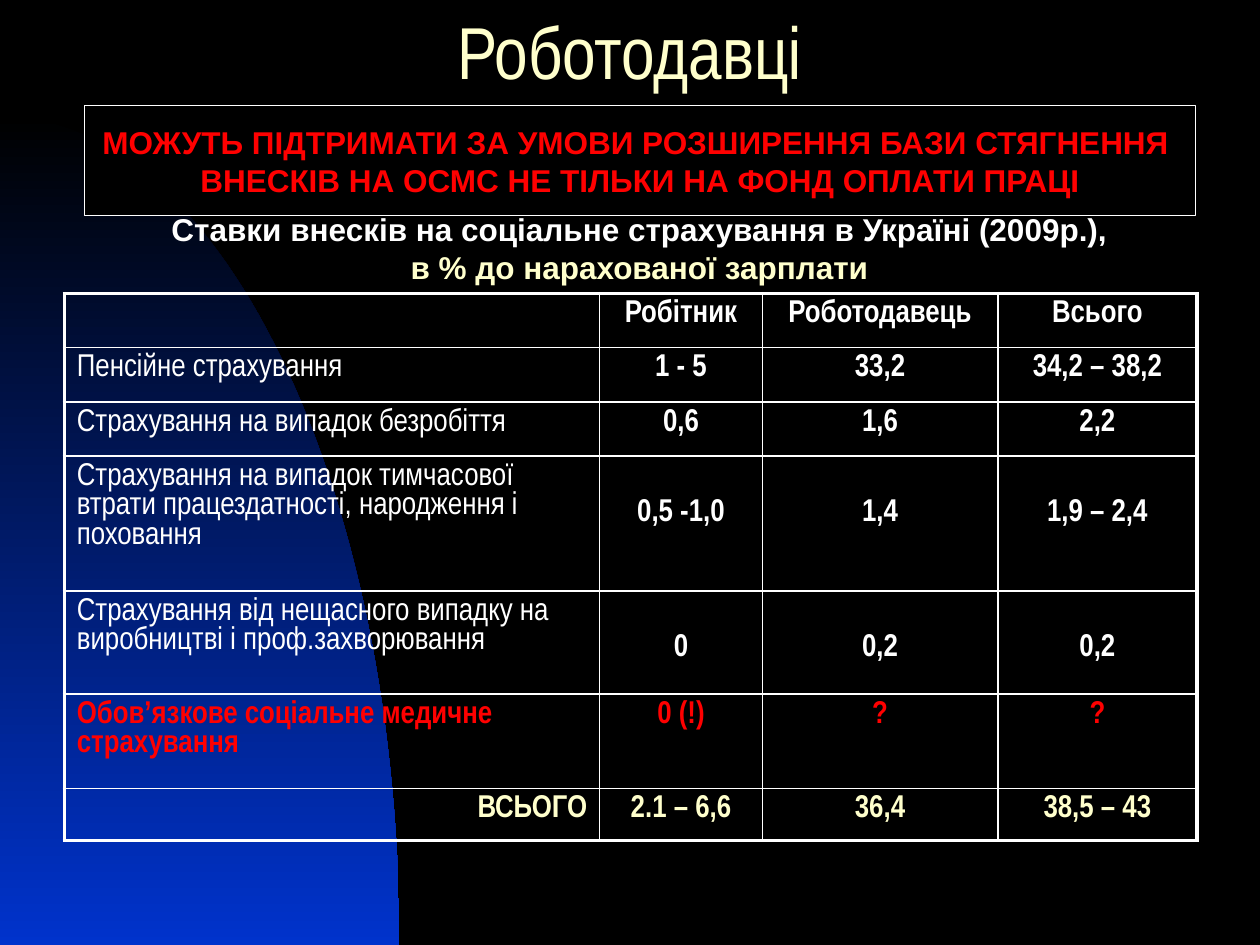
from lxml import etree
from pptx import Presentation
from pptx.dml.color import RGBColor
from pptx.enum.shapes import MSO_SHAPE
from pptx.enum.text import MSO_ANCHOR, PP_ALIGN
from pptx.oxml.ns import qn
from pptx.util import Inches, Pt

LEFT, CENTER, RIGHT = PP_ALIGN.LEFT, PP_ALIGN.CENTER, PP_ALIGN.RIGHT
TOP, MIDDLE = MSO_ANCHOR.TOP, MSO_ANCHOR.MIDDLE
RECTANGLE = MSO_SHAPE.RECTANGLE

BLACK, WHITE, BLUE = "000000", "FFFFFF", "0033CC"
CREAM, RED = "FFFFCC", "FF0000"
NARROW, SANS = "Arial Narrow", "Arial"

COL_WIDTHS = [4.25, 1.29, 1.87, 1.58]
# Row height, text colour, extra space above the figures, cell texts
ROWS = [
    (0.43, WHITE, 0, ["", "Робітник", "Роботодавець", "Всього"]),
    (0.43, WHITE, 0, ["Пенсійне страхування", "1 - 5", "33,2", "34,2 – 38,2"]),
    (0.43, WHITE, 0, ["Страхування на випадок безробіття", "0,6", "1,6", "2,2"]),
    (1.07, WHITE, 0.29, ["Страхування на випадок тимчасової втрати працездатності, "
                         "народження і поховання", "0,5 -1,0", "1,4", "1,9 – 2,4"]),
    (0.82, WHITE, 0.29, ["Страхування від нещасного випадку на виробництві "
                         "і проф.захворювання", "0", "0,2", "0,2"]),
    (0.75, RED, 0, ["Обов’язкове соціальне медичне страхування", "0 (!)", "?", "?"]),
    (0.41, CREAM, 0, ["ВСЬОГО", "2.1 – 6,6", "36,4", "38,5 – 43"]),
]


def rgb(value):
    return RGBColor.from_string(value)


def add_text(p, text, size=18, font=SANS, color=WHITE, bold=True,
             align=CENTER, before=0, spacing=None):
    p.alignment = align
    p.space_before = Pt(before)
    if spacing:
        p.line_spacing = spacing
    r = p.add_run()
    r.text = text
    r.font.size, r.font.name, r.font.bold = Pt(size), font, bold
    r.font.color.rgb = rgb(color)


def add_box(s, left, top, width, height, anchor=TOP):
    tf = s.shapes.add_textbox(Inches(left), Inches(top),
                              Inches(width), Inches(height)).text_frame
    tf.word_wrap = True
    tf.vertical_anchor = anchor
    return tf


def add_backdrop(s, left, top, width, height, steps=60):
    """Quarter-oval with a vertical gradient, bounded by a cubic curve."""
    points = []
    for i in range(steps + 1):
        t = i / steps
        x = 3 * (1 - t) ** 2 * t * 0.55 + 3 * (1 - t) * t ** 2 + t ** 3
        y = 3 * (1 - t) * t ** 2 * 0.45 + t ** 3
        points.append((Inches(left + x * width), Inches(top + y * height)))
    builder = s.shapes.build_freeform(*points[0])
    builder.add_line_segments(points[1:] + [(Inches(left), Inches(top + height))])
    sp = builder.convert_to_shape()
    sp.shadow.inherit = False
    sp.line.fill.background()
    sp.fill.gradient()
    sp.fill.gradient_angle = 270
    for stop, color, position in zip(sp.fill.gradient_stops, (BLACK, BLUE), (0, 1)):
        stop.color.rgb = rgb(color)
        stop.position = position


def add_title(s, left, top, width, height):
    tf = add_box(s, left, top, width, height, MIDDLE)
    add_text(tf.paragraphs[0], "Роботодавці", size=42, font=NARROW,
             color=CREAM, bold=False, spacing=0.7)


def set_borders(cell, widths):
    """Draw white borders; widths go left, right, top, bottom in points."""
    tc_pr = cell._tc.get_or_add_tcPr()
    for i, (side, width) in enumerate(zip("LRTB", widths)):
        ln = etree.Element(qn("a:ln" + side), w=str(Pt(width)))
        fill = etree.SubElement(ln, qn("a:solidFill"))
        etree.SubElement(fill, qn("a:srgbClr"), val=WHITE)
        tc_pr.insert(i, ln)


def add_rates_table(s, left, top, width, height):
    last_row, last_col = len(ROWS) - 1, len(COL_WIDTHS) - 1
    table = s.shapes.add_table(len(ROWS), len(COL_WIDTHS), Inches(left), Inches(top),
                               Inches(width), Inches(height)).table
    table.first_row = table.horz_banding = False
    for column, col_width in zip(table.columns, COL_WIDTHS):
        column.width = Inches(col_width)
    for i, (row_height, color, extra, texts) in enumerate(ROWS):
        table.rows[i].height = Inches(row_height)
        for j, text in enumerate(texts):
            cell = table.cell(i, j)
            cell.fill.background()
            edges = (j == 0, j == last_col, i == 0, i == last_row)
            set_borders(cell, [2.25 if edge else 1 for edge in edges])
            if not text:
                continue
            align = CENTER
            if j == 0:
                align = RIGHT if i == last_row else LEFT
            else:
                cell.margin_top = Inches(0.05 + extra)
            add_text(cell.text_frame.paragraphs[0], text, font=NARROW, color=color,
                     bold=j > 0 or color != WHITE, align=align, before=3.6)


def add_caption(s, left, top, width, height):
    tf = add_box(s, left, top, width, height)
    add_text(tf.paragraphs[0],
             "Ставки внесків на соціальне страхування в Україні (2009р.),")
    add_text(tf.add_paragraph(), "в % до нарахованої зарплати", color=CREAM)


def add_condition(s, left, top, width, height):
    sp = s.shapes.add_shape(RECTANGLE, Inches(left), Inches(top),
                            Inches(width), Inches(height))
    sp.shadow.inherit = False
    sp.fill.solid()
    sp.fill.fore_color.rgb = rgb(BLACK)
    sp.line.color.rgb = rgb(WHITE)
    sp.line.width = Pt(0.75)
    tf = sp.text_frame
    tf.word_wrap = False
    tf.vertical_anchor = MIDDLE
    add_text(tf.paragraphs[0],
             "МОЖУТЬ ПІДТРИМАТИ ЗА УМОВИ РОЗШИРЕННЯ БАЗИ СТЯГНЕННЯ ", color=RED)
    add_text(tf.add_paragraph(),
             "ВНЕСКІВ НА ОСМС НЕ ТІЛЬКИ НА ФОНД ОПЛАТИ ПРАЦІ", color=RED)


def main():
    prs = Presentation()
    prs.slide_width, prs.slide_height = Inches(10), Inches(7.5)
    s = prs.slides.add_slide(prs.slide_layouts[6])
    s.background.fill.solid()
    s.background.fill.fore_color.rgb = rgb(BLACK)

    add_backdrop(s, 0, 0.92, 3.17, 6.58)
    add_title(s, 0.5, 0.13, 9, 0.71)
    add_rates_table(s, 0.51, 2.33, 9, 4.33)
    add_caption(s, 0.43, 1.62, 9.29, 0.7)
    add_condition(s, 0.67, 0.84, 8.82, 0.87)
    prs.save("out.pptx")


if __name__ == "__main__":
    main()
